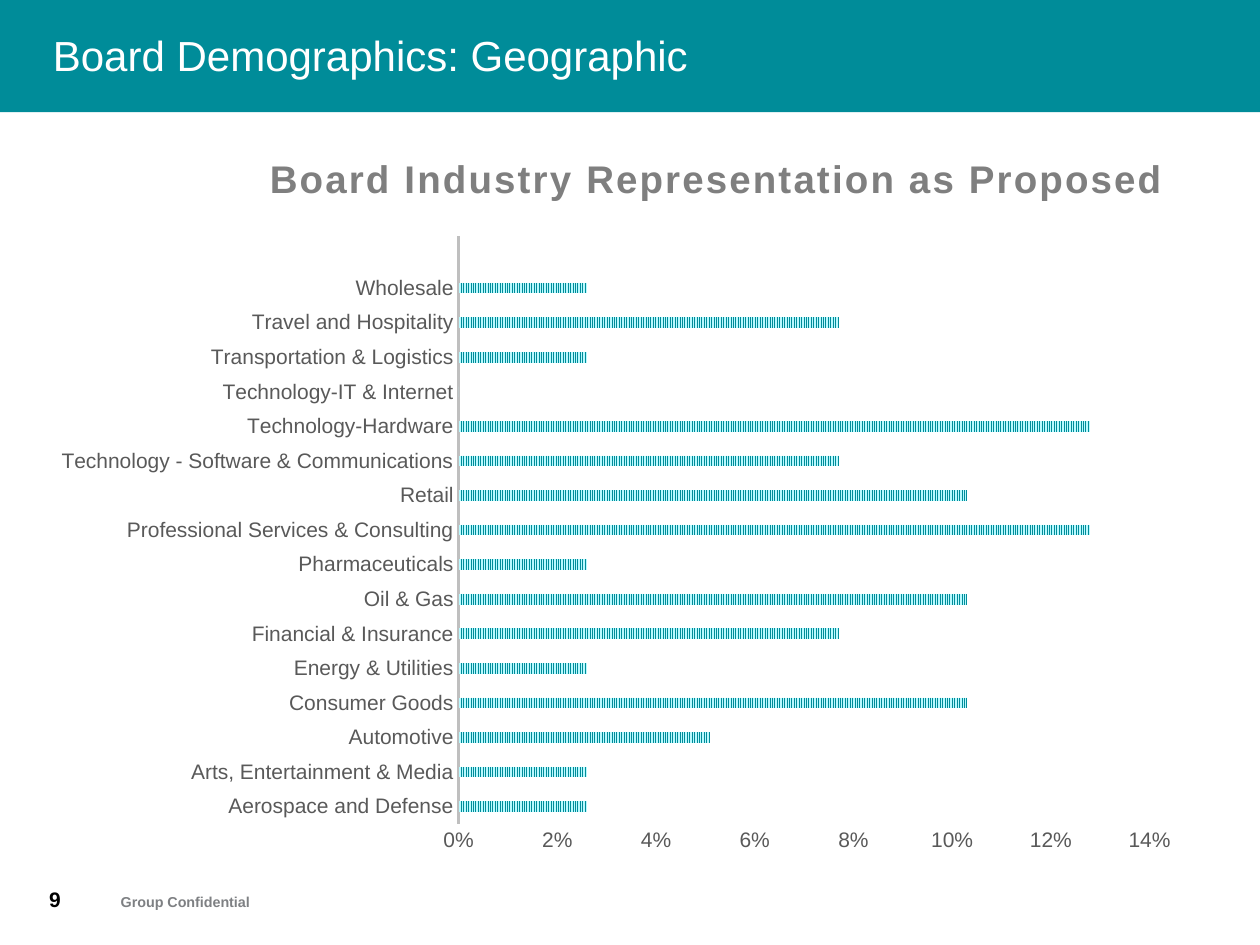
"""Build the board industry representation slide."""
from lxml.etree import SubElement
from pptx import Presentation
from pptx.chart.data import CategoryChartData
from pptx.dml.color import RGBColor
from pptx.enum.chart import XL_CHART_TYPE as ChartType, XL_TICK_MARK as TickMark
from pptx.enum.dml import MSO_PATTERN as Pattern
from pptx.enum.shapes import MSO_SHAPE as Shape
from pptx.enum.text import MSO_ANCHOR as Anchor
from pptx.oxml.ns import qn
from pptx.util import Inches, Pt

TEAL = RGBColor(0x00, 0x8C, 0x99)
PALE_TEAL = RGBColor(0xB8, 0xF9, 0xFF)
WHITE = RGBColor(0xFF, 0xFF, 0xFF)
BLACK = RGBColor(0x00, 0x00, 0x00)
FOOTER_GRAY = RGBColor(0x7E, 0x80, 0x83)
TITLE_GRAY = RGBColor(0x7F, 0x7F, 0x7F)
LABEL_GRAY = RGBColor(0x59, 0x59, 0x59)
AXIS_GRAY = RGBColor(0xBF, 0xBF, 0xBF)

INDUSTRIES = [
    ("Aerospace and Defense", 0.026),
    ("Arts, Entertainment & Media", 0.026),
    ("Automotive", 0.051),
    ("Consumer Goods", 0.103),
    ("Energy & Utilities", 0.026),
    ("Financial & Insurance", 0.077),
    ("Oil & Gas", 0.103),
    ("Pharmaceuticals", 0.026),
    ("Professional Services & Consulting", 0.128),
    ("Retail", 0.103),
    ("Technology - Software & Communications", 0.077),
    ("Technology-Hardware", 0.128),
    ("Technology-IT & Internet", 0),
    ("Transportation & Logistics", 0.026),
    ("Travel and Hospitality", 0.077),
    ("Wholesale", 0.026),
    ("", None),
]


def style(font, size, color, bold=False):
    font.name = "Arial"
    font.size = Pt(size)
    font.bold = bold
    font.color.rgb = color


def set_layout(parent, **settings):
    for old in parent.findall(qn("c:layout")):
        parent.remove(old)
    layout = SubElement(parent, qn("c:layout"))
    manual = SubElement(layout, qn("c:manualLayout"))
    for tag, value in settings.items():
        SubElement(manual, qn(f"c:{tag}")).set("val", str(value))
    return layout


deck = Presentation()
deck.slide_width, deck.slide_height = Inches(10), Inches(7.5)
slide = deck.slides.add_slide(deck.slide_layouts[6])

banner = slide.shapes.add_shape(Shape.RECTANGLE, 0, 0, Inches(10), Inches(0.89))
banner.shadow.inherit = False
banner.fill.solid()
banner.fill.fore_color.rgb = TEAL
banner.line.fill.background()

for words, left, top, width, height, inset, size, color, bold in [
    ("Board Demographics: Geographic", 0.42, 0, 9.16, 0.87, 0, 24, WHITE, False),
    ("9", 0.39, 7.04, 0.54, 0.2, 0, 12, BLACK, True),
    ("Group Confidential", 0.86, 7.04, 2.35, 0.24, 0.05, 8.2, FOOTER_GRAY, True),
]:
    label = slide.shapes.add_textbox(Inches(left), Inches(top), Inches(width), Inches(height))
    frame = label.text_frame
    frame.word_wrap = True
    frame.margin_top = frame.margin_bottom = Inches(inset)
    frame.margin_left = frame.margin_right = Inches(2 * inset)
    frame.vertical_anchor = Anchor.MIDDLE if top == 0 else Anchor.TOP
    frame.text = words
    style(frame.paragraphs[0].font, size, color, bold)

shares = CategoryChartData(number_format="0%")
shares.categories = [industry for industry, share in INDUSTRIES]
shares.add_series("Series 1", [share for industry, share in INDUSTRIES])
chart = slide.shapes.add_chart(
    ChartType.BAR_CLUSTERED, Inches(0.35), Inches(1.06), Inches(9.14), Inches(5.83), shares
).chart
style(chart.font, 10, BLACK)
chart.has_legend = False

heading = chart.chart_title.text_frame
heading.text = "Board Industry Representation as Proposed"
style(heading.paragraphs[0].font, 22, TITLE_GRAY, True)
heading.paragraphs[0].runs[0].font.size = Pt(22)
heading.paragraphs[0].runs[0]._r.get_or_add_rPr().set("spc", "135")
chart.chart_title.include_in_layout = False
title_xml = chart.chart_title._element
title_xml.find(qn("c:tx")).addnext(
    set_layout(title_xml, xMode="edge", yMode="edge", x=0.19, y=0.02)
)

plot = chart.plots[0]
plot.gap_width = 227
plot.overlap = -48
plot.vary_by_categories = False
bars = plot.series[0].format
bars.fill.patterned()
bars.fill.pattern = Pattern.NARROW_VERTICAL
bars.fill.fore_color.rgb = TEAL
bars.fill.back_color.rgb = PALE_TEAL
bars.line.fill.background()

for axis in (chart.category_axis, chart.value_axis):
    axis.major_tick_mark = axis.minor_tick_mark = TickMark.NONE
    axis.has_major_gridlines = False
    style(axis.tick_labels.font, 12, LABEL_GRAY)
chart.category_axis.format.line.color.rgb = AXIS_GRAY
chart.category_axis.format.line.width = Pt(1.5)
percent = chart.value_axis
percent.format.line.fill.background()
percent.minimum_scale, percent.maximum_scale, percent.major_unit = 0, 0.14, 0.02
percent.tick_labels.number_format = "0%"
percent.tick_labels.number_format_is_linked = False

plot_area = plot._element.getparent()
plot_area.insert(0, set_layout(
    plot_area, layoutTarget="inner", xMode="edge", yMode="edge", x=0.36, y=0.14, w=0.6, h=0.8
))

deck.save("out.pptx")
